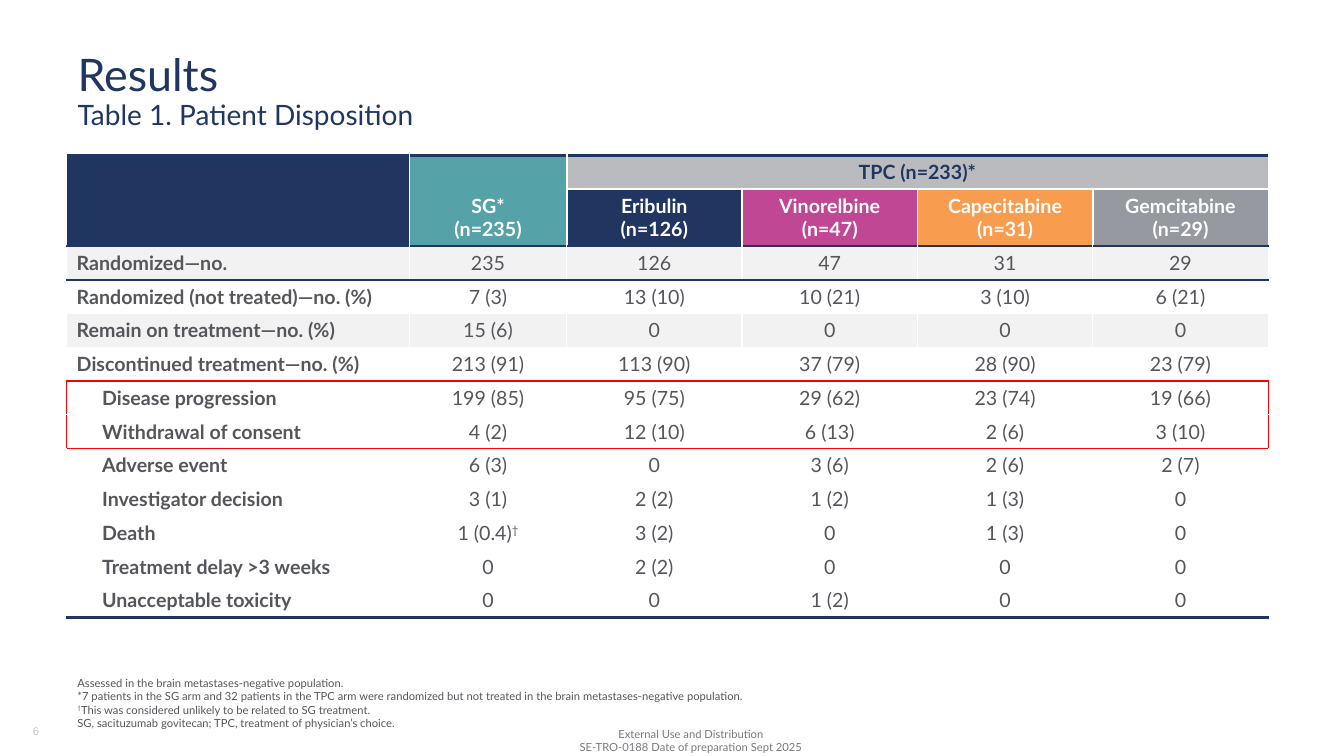
from lxml import etree
from pptx import Presentation
from pptx.dml.color import RGBColor
from pptx.enum.text import MSO_ANCHOR, MSO_AUTO_SIZE, PP_ALIGN
from pptx.oxml.ns import qn
from pptx.util import Cm, Pt

LEFT, CENTER = PP_ALIGN.LEFT, PP_ALIGN.CENTER
MIDDLE, BOTTOM = MSO_ANCHOR.MIDDLE, MSO_ANCHOR.BOTTOM
NO_FIT = MSO_AUTO_SIZE.NONE
NAVY, WHITE, RED, TEXT, STRIPE = "203661", "FFFFFF", "FF0000", "54565B", "F2F2F2"

# Content: a line break inside a string stays within its paragraph
TITLE = "Results\nTable 1. Patient Disposition"
FOOTER = ["External Use and Distribution", "SE-TRO-0188 Date of preparation Sept 2025"]
PAGE_NUMBER = ["6"]
NOTES = [
    "Assessed in the brain metastases-negative population.\n"
    "*7 patients in the SG arm and 32 patients in the TPC arm were randomized "
    "but not treated in the brain metastases-negative population.\n"
    "†This was considered unlikely to be related to SG treatment.",
    "SG, sacituzumab govitecan; TPC, treatment of physician’s choice.",
]

# Header cells: row, column, rows spanned, columns spanned, lines, fill, colour, anchor
HEADERS = [
    (0, 0, 2, 1, [], NAVY, WHITE, BOTTOM),
    (0, 1, 2, 1, ["SG*", "(n=235)"], "55A2A8", WHITE, BOTTOM),
    (0, 2, 1, 4, ["TPC (n=233)*"], "B9BBBF", NAVY, MIDDLE),
    (1, 2, 1, 1, ["Eribulin", "(n=126)"], NAVY, WHITE, BOTTOM),
    (1, 3, 1, 1, ["Vinorelbine", "(n=47)"], "C04794", WHITE, BOTTOM),
    (1, 4, 1, 1, ["Capecitabine", "(n=31)"], "F89D50", WHITE, BOTTOM),
    (1, 5, 1, 1, ["Gemcitabine", "(n=29)"], "96999F", WHITE, BOTTOM),
]
OUTCOMES = [
    ("Randomized—no.", "235", "126", "47", "31", "29"),
    ("Randomized (not treated)—no. (%)", "7 (3)", "13 (10)", "10 (21)", "3 (10)", "6 (21)"),
    ("Remain on treatment—no. (%)", "15 (6)", "0", "0", "0", "0"),
    ("Discontinued treatment—no. (%)", "213 (91)", "113 (90)", "37 (79)", "28 (90)", "23 (79)"),
    ("Disease progression", "199 (85)", "95 (75)", "29 (62)", "23 (74)", "19 (66)"),
    ("Withdrawal of consent", "4 (2)", "12 (10)", "6 (13)", "2 (6)", "3 (10)"),
    ("Adverse event", "6 (3)", "0", "3 (6)", "2 (6)", "2 (7)"),
    ("Investigator decision", "3 (1)", "2 (2)", "1 (2)", "1 (3)", "0"),
    ("Death", "1 (0.4)†", "3 (2)", "0", "1 (3)", "0"),
    ("Treatment delay >3 weeks", "0", "2 (2)", "0", "0", "0"),
    ("Unacceptable toxicity", "0", "0", "1 (2)", "0", "0"),
]
HEADER_ROWS = 2
FIRST_REASON = 6
STRIPED_ROWS = (2, 4)
BOXED_ROWS = (6, 7)
COLUMN_WIDTHS = [8.64, 3.96] + [4.42] * 4
ROW_HEIGHTS = [0.85, 1.43] + [0.85] * len(OUTCOMES)

# Horizontal rules by row boundary; all others are thin white
RULES = {0: (NAVY, 2.25), 1: (WHITE, 1.5), 2: (NAVY, 2.25), 3: (NAVY, 1.5),
         6: (RED, 1), 8: (RED, 1), len(ROW_HEIGHTS): (NAVY, 2.25)}


def colour(code):
    return RGBColor.from_string(code)


def write(frame, paragraphs, sizes=(8,), code=TEXT, align=LEFT, bold=False,
          font="Lato", spacing=1.0):
    """Fill a text frame; sizes go by line, and a dagger is raised."""
    for number, text in enumerate(paragraphs):
        para = frame.add_paragraph() if number else frame.paragraphs[0]
        para.alignment, para.line_spacing = align, spacing
        for index, line in enumerate(text.split("\n")):
            size = sizes[min(index, len(sizes) - 1)]
            if index:
                para.add_line_break()
                etree.SubElement(para._p[-1], qn("a:rPr"), sz=str(size * 100))
            for piece in filter(None, line.partition("†")):
                span = para.add_run()
                span.text = piece
                style = {"name": font, "size": Pt(size), "bold": bold}
                for name, value in style.items():
                    setattr(span.font, name, value)
                span.font.color.rgb = colour(code)
                if piece == "†":
                    span._r.get_or_add_rPr().set("baseline", "30000")


def set_frame(frame, anchor):
    settings = {"word_wrap": True, "auto_size": NO_FIT, "vertical_anchor": anchor}
    for name, value in settings.items():
        setattr(frame, name, value)


def add_text(page, place, paragraphs, anchor, **style):
    box = page.shapes.add_textbox(*map(Cm, place))
    set_frame(box.text_frame, anchor)
    write(box.text_frame, paragraphs, **style)


def side_rule(row, boundary):
    """Colour and width of a vertical rule."""
    outer = boundary in (0, len(COLUMN_WIDTHS))
    if outer and row in BOXED_ROWS:
        return RED, 1
    return WHITE, 1.5 if row < HEADER_ROWS and not outer else 1


def finish_cell(cell, row, column, fill, anchor):
    """Set borders, then fill, in the order the cell format needs."""
    below, right = row + 1, column + 1
    if cell.is_merge_origin:
        below, right = row + cell.span_height, column + cell.span_width
    borders = {
        "a:lnL": side_rule(row, column),
        "a:lnR": side_rule(row, right),
        "a:lnT": RULES.get(row, (WHITE, 1)),
        "a:lnB": RULES.get(below, (WHITE, 1)),
    }
    properties = cell._tc.get_or_add_tcPr()
    for tag, (code, width) in borders.items():
        line = etree.SubElement(properties, qn(tag), w=str(int(Pt(width))))
        solid = etree.SubElement(line, qn("a:solidFill"))
        etree.SubElement(solid, qn("a:srgbClr"), val=code)
    cell.fill.solid()
    cell.fill.fore_color.rgb = colour(fill)
    cell.vertical_anchor = anchor


def add_disposition_table(page):
    frame = page.shapes.add_table(len(ROW_HEIGHTS), len(COLUMN_WIDTHS), Cm(1.68), Cm(3.91),
                                  Cm(sum(COLUMN_WIDTHS)), Cm(sum(ROW_HEIGHTS)))
    table = frame.table
    table.first_row = table.horz_banding = False
    for column, width in zip(table.columns, COLUMN_WIDTHS):
        column.width = Cm(width)
    for row, height in zip(table.rows, ROW_HEIGHTS):
        row.height = Cm(height)

    # Header
    for row, column, tall, wide, lines, fill, code, anchor in HEADERS:
        cell = table.cell(row, column)
        if tall * wide > 1:
            cell.merge(table.cell(row + tall - 1, column + wide - 1))
        write(cell.text_frame, lines, (14,), code, CENTER, True)
        finish_cell(cell, row, column, fill, anchor)

    # Outcomes
    for row, values in enumerate(OUTCOMES, HEADER_ROWS):
        fill = STRIPE if row in STRIPED_ROWS else WHITE
        for column, value in enumerate(values):
            cell = table.cell(row, column)
            label = column == 0
            write(cell.text_frame, [value], (14,), TEXT, LEFT if label else CENTER, label)
            if label and row >= FIRST_REASON:
                cell.text_frame.paragraphs[0]._p.get_or_add_pPr().set("marL", str(Cm(0.64)))
            finish_cell(cell, row, column, fill, MIDDLE)


def main():
    deck = Presentation()
    deck.slide_width, deck.slide_height = Cm(33.87), Cm(19.05)
    page = deck.slides.add_slide(deck.slide_layouts[5])

    # Title
    title = page.shapes.title
    title.left, title.top, title.width, title.height = map(Cm, (1.7, 0.38, 30.35, 3.05))
    set_frame(title.text_frame, BOTTOM)
    write(title.text_frame, [TITLE], sizes=(32, 20), code=NAVY, spacing=0.9)

    add_disposition_table(page)

    # Notes, footer and page number
    add_text(page, (1.7, 16.89, 30.45, 1.63), NOTES, BOTTOM)
    add_text(page, (13.06, 18.26, 8.71, 0.81), FOOTER, MIDDLE, code="787A7E", align=CENTER)
    add_text(page, (0.58, 17.91, 1.52, 0.81), PAGE_NUMBER, BOTTOM, code="C6CAC6", font="Arial")

    deck.save("out.pptx")


if __name__ == "__main__":
    main()
